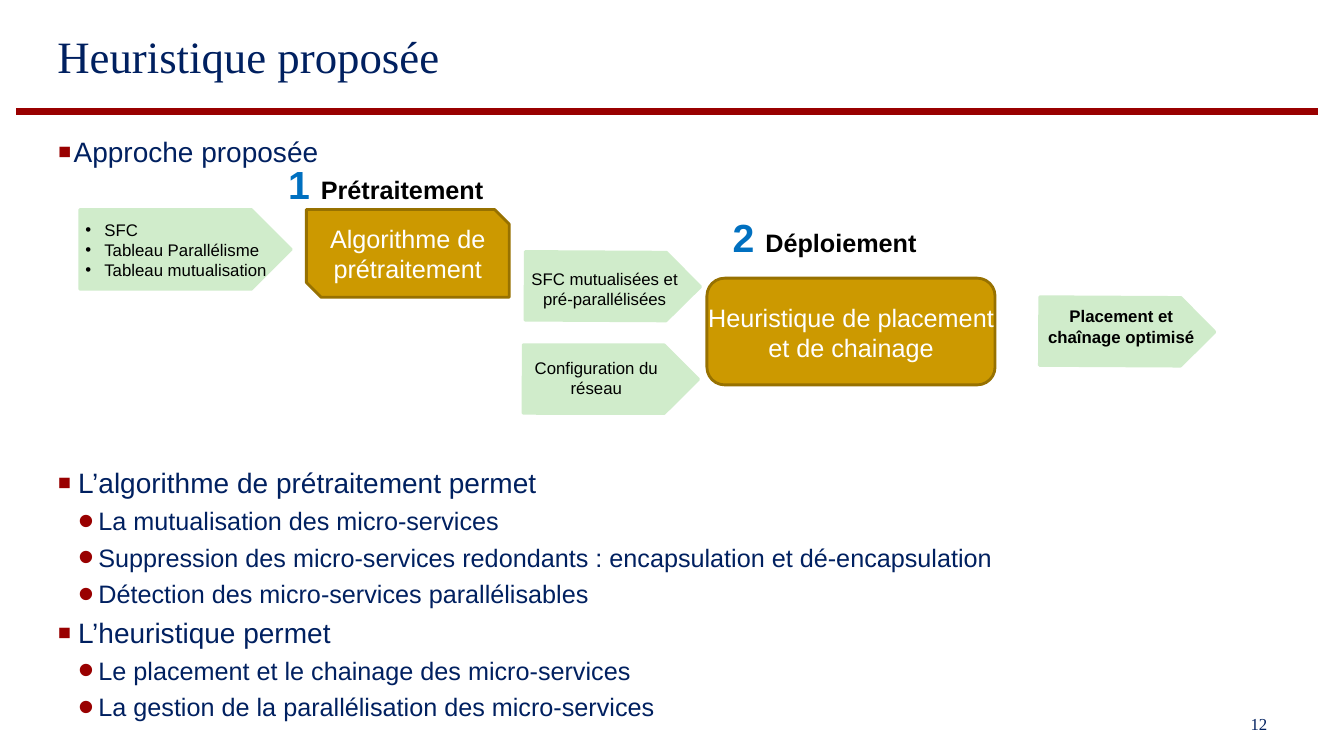
from dataclasses import dataclass
from typing import Any, Optional

from pptx import Presentation
from pptx.dml.color import RGBColor
from pptx.enum.shapes import MSO_CONNECTOR, MSO_SHAPE as Preset
from pptx.enum.text import MSO_ANCHOR as Anchor, MSO_AUTO_SIZE as AutoSize, PP_ALIGN as Align
from pptx.oxml.xmlchemy import OxmlElement
from pptx.util import Cm, Pt

NAVY = RGBColor(0x00, 0x20, 0x60)
RED = RGBColor(0x99, 0x00, 0x00)
BLUE = RGBColor(0x00, 0x70, 0xC0)
GOLD = RGBColor(0xCC, 0x99, 0x00)
BROWN = RGBColor(0x97, 0x71, 0x00)
GREEN = RGBColor(0xD0, 0xEC, 0xCB)
BLACK = RGBColor(0x00, 0x00, 0x00)
WHITE = RGBColor(0xFF, 0xFF, 0xFF)
SANS, SERIF = "Arial", "Times New Roman"


@dataclass(frozen=True)
class Frame:
    left: float
    top: float
    width: float
    height: float

    def lengths(self) -> tuple:
        return Cm(self.left), Cm(self.top), Cm(self.width), Cm(self.height)


@dataclass(frozen=True)
class Style:
    size: float
    color: RGBColor
    bold: bool = False
    name: str = SANS


@dataclass(frozen=True)
class Bullet:
    char: str
    margin: float
    hanging: float
    percent: int = 100
    color: Optional[RGBColor] = None


@dataclass(frozen=True)
class Block:
    frame: Frame
    preset: Preset
    fill: RGBColor
    line: RGBColor
    caption_frame: Frame
    lines: tuple
    style: Style
    bullet: Optional[Bullet] = None
    rotation: float = 0
    grouped: bool = False


SMALL = Style(12, BLACK)
TOPIC, DETAIL = Style(20, NAVY), Style(18, NAVY)
ON_GOLD = Style(18, WHITE)
TOPIC_BULLET = Bullet("▪", 0.53, 0.53, 150, RED)
DETAIL_BULLET = Bullet("•", 1.04, 0.51, 180, RED)
INPUT_BULLET = Bullet("•", 0.48, 0.48)
PLATE = {"preset": Preset.PENTAGON, "fill": GREEN, "line": GREEN}
STEP = {"fill": GOLD, "line": BROWN, "style": ON_GOLD}

BLOCKS = [
    Block(Frame(2.01, 5.28, 5.33, 2.01), **PLATE, caption_frame=Frame(1.9, 5.41, 5.33, 1.8),
          lines=("SFC", "Tableau Parallélisme", "Tableau mutualisation"),
          style=SMALL, bullet=INPUT_BULLET, grouped=True),
    Block(Frame(13.23, 6.35, 4.42, 1.73), **PLATE, caption_frame=Frame(13, 6.65, 4.47, 1.27),
          lines=("SFC mutualisées et pré-parallélisées",), style=SMALL, rotation=0.3, grouped=True),
    Block(Frame(13.18, 8.69, 4.42, 1.73), **PLATE, caption_frame=Frame(12.93, 8.89, 4.19, 1.27),
          lines=("Configuration du réseau",), style=SMALL, rotation=0.1, grouped=True),
    Block(Frame(26.19, 7.49, 4.42, 1.73), **PLATE, caption_frame=Frame(25.86, 7.59, 4.78, 1.27),
          lines=("Placement et chaînage optimisé",), style=Style(12, BLACK, True), rotation=0.3),
    Block(Frame(17.81, 7.01, 7.26, 2.69), Preset.ROUNDED_RECTANGLE, **STEP,
          caption_frame=Frame(17.53, 7.49, 7.82, 1.8),
          lines=("Heuristique de placement et de chainage",)),
]
HEADINGS = [
    (Frame(7.01, 3.91, 9.12, 1.45), "1 ", "Prétraitement"),
    (Frame(18.21, 5.26, 9.32, 1.45), "2 ", "Déploiement"),
]
BENEFITS = {
    "L’algorithme de prétraitement permet": (
        "La mutualisation des micro-services",
        "Suppression des micro-services redondants : encapsulation et dé-encapsulation",
        "Détection des micro-services parallélisables"),
    "L’heuristique permet": (
        "Le placement et le chainage des micro-services",
        "La gestion de la parallélisation des micro-services"),
}


def set_all(target: Any, values: dict) -> None:
    for name, value in values.items():
        setattr(target, name, value)


def add_bullet(para: Any, bullet: Bullet) -> None:
    props = para._p.get_or_add_pPr()
    props.set("marL", str(Cm(bullet.margin)))
    props.set("indent", str(-Cm(bullet.hanging)))
    if bullet.color is not None:
        tint = OxmlElement("a:buClr")
        value = OxmlElement("a:srgbClr")
        value.set("val", str(bullet.color))
        tint.append(value)
        props.append(tint)
    for tag, key, content in (("a:buSzPct", "val", str(bullet.percent * 1000)),
                              ("a:buFont", "typeface", SANS),
                              ("a:buChar", "char", bullet.char)):
        part = OxmlElement(tag)
        part.set(key, content)
        props.append(part)


def add_span(para: Any, text: str, style: Style) -> None:
    span = para.add_run()
    span.text = text
    set_all(span.font, {"size": Pt(style.size), "bold": style.bold, "name": style.name})
    span.font.color.rgb = style.color


def write(box: Any, index: int, text: str, style: Style, bullet: Optional[Bullet] = None,
          align: Align = Align.LEFT, gap: float = 0) -> None:
    frame = box.text_frame
    para = frame.add_paragraph() if index else frame.paragraphs[0]
    set_all(para, {"alignment": align, "space_before": Pt(gap if index else 0)})
    if bullet:
        add_bullet(para, bullet)
    add_span(para, text, style)


def prepare(box: Any, anchor: Anchor = Anchor.TOP) -> Any:
    set_all(box.text_frame, {"word_wrap": True, "auto_size": AutoSize.NONE,
                             "vertical_anchor": anchor})
    return box


def add_box(shapes: Any, frame: Frame, anchor: Anchor = Anchor.TOP) -> Any:
    return prepare(shapes.add_textbox(*frame.lengths()), anchor)


def fill_placeholder(box: Any, frame: Frame, anchor: Anchor) -> Any:
    set_all(box, dict(zip(("left", "top", "width", "height"), frame.lengths())))
    return prepare(box, anchor)


def add_preset(shapes: Any, preset: Preset, frame: Frame, fill: RGBColor, line: RGBColor) -> Any:
    shape = shapes.add_shape(preset, *frame.lengths())
    shape.shadow.inherit = False
    shape.fill.solid()
    shape.fill.fore_color.rgb = fill
    shape.line.color.rgb = line
    shape.line.width = Pt(2)
    return shape


def draw_block(page: Any, block: Block) -> None:
    shapes = page.shapes.add_group_shape().shapes if block.grouped else page.shapes
    shape = add_preset(shapes, block.preset, block.frame, block.fill, block.line)
    shape.rotation = block.rotation
    caption = add_box(shapes, block.caption_frame)
    align = Align.LEFT if block.bullet else Align.CENTER
    for index, text in enumerate(block.lines):
        write(caption, index, text, block.style, block.bullet, align)


def main() -> None:
    deck = Presentation()
    set_all(deck, {"slide_width": Cm(33.86), "slide_height": Cm(19.05)})
    page = deck.slides.add_slide(deck.slide_layouts[1])

    # Title, rule and opening topic
    title = fill_placeholder(page.shapes.title, Frame(1.19, 0.48, 27.74, 1.85), Anchor.MIDDLE)
    write(title, 0, "Heuristique proposée", Style(32, NAVY, name=SERIF))
    rule = page.shapes.add_connector(MSO_CONNECTOR.STRAIGHT, Cm(0.41), Cm(2.82), Cm(33.2), Cm(2.82))
    rule.line.color.rgb = RED
    rule.line.width = Pt(5)
    rule._element.spPr.append(OxmlElement("a:effectLst"))
    body = fill_placeholder(page.placeholders[1], Frame(1.19, 3.25, 8.94, 1.19), Anchor.TOP)
    write(body, 0, "Approche proposée", TOPIC, Bullet("▪", 0.41, 0.41, 150, RED))

    # Processing diagram
    step = add_preset(page.shapes, Preset.SNIP_2_DIAG_RECTANGLE, Frame(7.72, 5.28, 5.11, 2.21),
                      GOLD, BROWN)
    prepare(step, Anchor.MIDDLE)
    write(step, 0, "Algorithme de prétraitement", ON_GOLD, align=Align.CENTER)
    for block in BLOCKS:
        draw_block(page, block)
    for frame, number, label in HEADINGS:
        heading = add_box(page.shapes, frame)
        write(heading, 0, number, Style(28, BLUE, True))
        add_span(heading.text_frame.paragraphs[0], label, Style(18, BLACK, True))

    # Benefits of both steps
    benefits = add_box(page.shapes, Frame(1.19, 11.61, 31.83, 6.2))
    rows = [row for topic, details in BENEFITS.items()
            for row in [(topic, TOPIC, TOPIC_BULLET),
                        *((detail, DETAIL, DETAIL_BULLET) for detail in details)]]
    for index, (text, style, bullet) in enumerate(rows):
        write(benefits, index, text, style, bullet, gap=4.5)
        benefits.text_frame.paragraphs[index].level = int(style is DETAIL)

    # Page number
    number_box = add_box(page.shapes, Frame(28.4, 17.93, 3.78, 0.69), Anchor.BOTTOM)
    write(number_box, 0, "12", Style(12, NAVY, name=SERIF), align=Align.RIGHT)
    deck.save("out.pptx")


if __name__ == "__main__":
    main()
